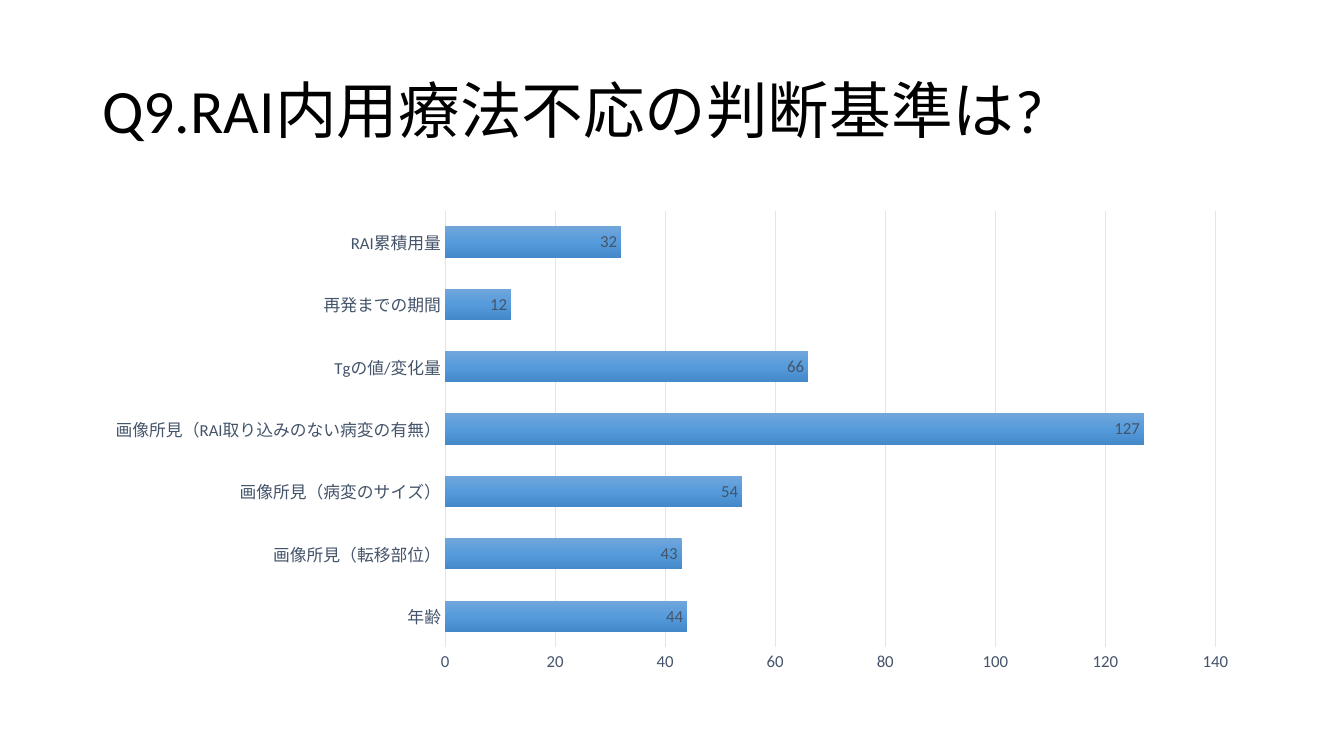
from lxml import etree
from pptx import Presentation
from pptx import util as u
from pptx.chart import data
from pptx.dml import color
from pptx.enum import chart as ch, text
from pptx.oxml import ns

FONT = "Calibri"
COLORS = {
    "title": "000000",
    "label": "44546A",
    "grid": "E0E5EB",
    "bar_top": "71A6DB",
    "bar_middle": "559BDB",
    "bar_bottom": "448ACA",
}
ANSWERS = {
    "年齢": 44,
    "画像所見（転移部位）": 43,
    "画像所見（病変のサイズ）": 54,
    "画像所見（RAI取り込みのない病変の有無）": 127,
    "Tgの値/変化量": 66,
    "再発までの期間": 12,
    "RAI累積用量": 32,
}
LEFT, WIDTH = u.Cm(2.33), u.Cm(29.21)


def rgb(name):
    return color.RGBColor.from_string(COLORS[name])


def set_font(font, size, name):
    font.name = FONT
    font.size = u.Pt(size)
    font.color.rgb = rgb(name)


def set_line(line, name):
    line.color.rgb = rgb(name)
    line.width = u.Pt(0.75)


def add_title(slide, wording):
    title = slide.shapes.add_textbox(LEFT, u.Cm(1.01), WIDTH, u.Cm(3.68))
    frame = title.text_frame
    frame.word_wrap = True
    frame.vertical_anchor = text.MSO_ANCHOR.MIDDLE
    paragraph = frame.paragraphs[0]
    paragraph.text = wording
    paragraph.line_spacing = 0.9
    set_font(paragraph.font, 44, "title")


def shade_bars(series):
    fill = series.format.fill
    fill.gradient()
    fill.gradient_angle = 270
    stops = series._element.find(".//" + ns.qn("a:gsLst"))
    for stop in list(stops):
        stops.remove(stop)
    for position, name in enumerate(("bar_top", "bar_middle", "bar_bottom")):
        stop = etree.SubElement(stops, ns.qn("a:gs"), pos=str(position * 50000))
        etree.SubElement(stop, ns.qn("a:srgbClr"), val=COLORS[name])


def style_axis(axis):
    axis.major_tick_mark = ch.XL_TICK_MARK.NONE
    axis.minor_tick_mark = ch.XL_TICK_MARK.NONE
    set_font(axis.tick_labels.font, 12, "label")


def add_answer_chart(slide, answers):
    chart_data = data.CategoryChartData()
    chart_data.categories = list(answers)
    chart_data.add_series("Series 1", list(answers.values()))
    chart = slide.shapes.add_chart(
        ch.XL_CHART_TYPE.BAR_CLUSTERED, LEFT, u.Cm(5.07), WIDTH, u.Cm(12.09), chart_data
    ).chart
    chart.has_legend = False
    chart.has_title = False
    set_font(chart.font, 10, "title")

    criteria, counts = chart.category_axis, chart.value_axis
    style_axis(criteria)
    style_axis(counts)
    criteria.has_major_gridlines = False
    set_line(criteria.format.line, "grid")
    counts.format.line.fill.background()
    counts.has_major_gridlines = True
    set_line(counts.major_gridlines.format.line, "grid")
    counts.minimum_scale, counts.maximum_scale, counts.major_unit = 0, 140, 20

    plot = chart.plots[0]
    plot.gap_width = 100
    plot.vary_by_categories = False
    bars = plot.series[0]
    shade_bars(bars)
    labels = bars.data_labels
    labels.show_value = True
    labels.position = ch.XL_LABEL_POSITION.INSIDE_END
    set_font(labels.font, 12, "label")


def main():
    deck = Presentation()
    deck.slide_width, deck.slide_height = u.Cm(33.87), u.Cm(19.05)
    slide = deck.slides.add_slide(deck.slide_layouts[6])
    add_title(slide, "Q9.RAI内用療法不応の判断基準は?")
    add_answer_chart(slide, ANSWERS)
    deck.save("out.pptx")


if __name__ == "__main__":
    main()
